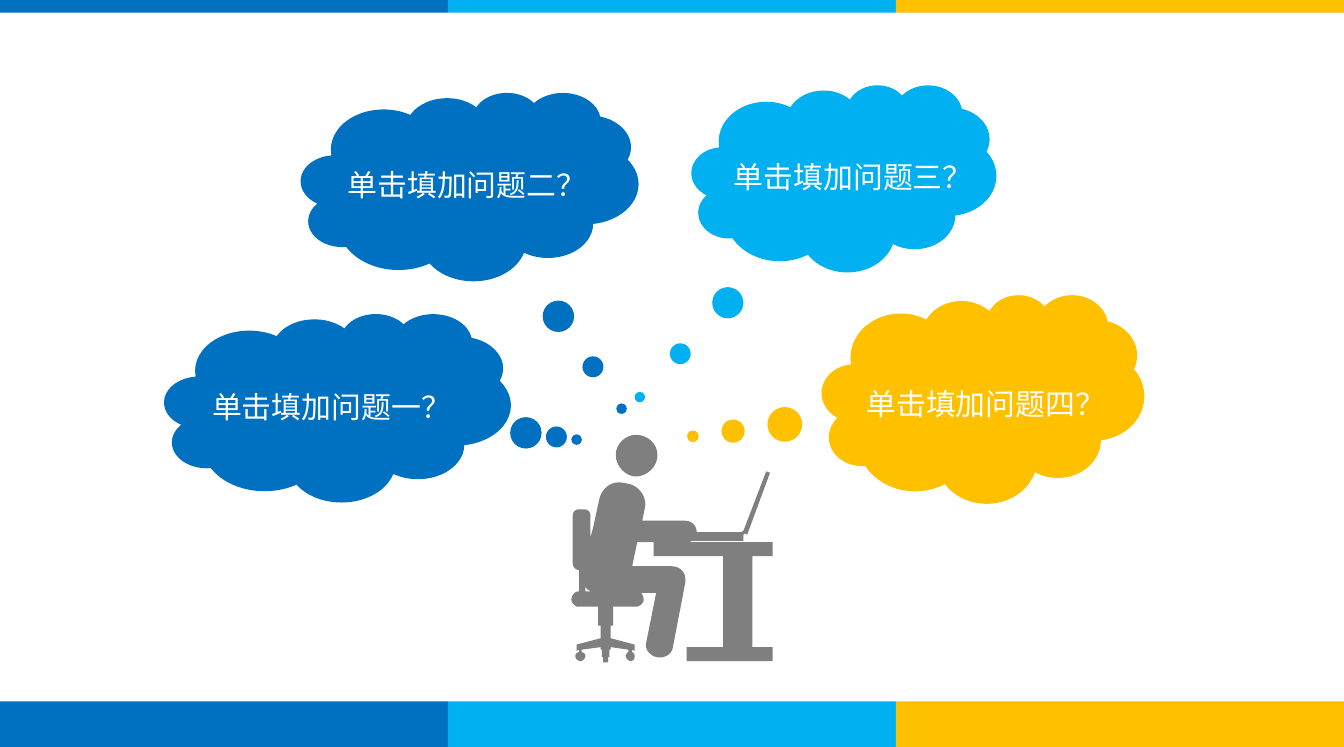
from lxml import etree
from pptx import Presentation
from pptx.dml.color import RGBColor
from pptx.enum.shapes import MSO_SHAPE
from pptx.enum.text import MSO_ANCHOR, PP_ALIGN
from pptx.oxml.ns import qn
from pptx.util import Inches, Pt

RECTANGLE = MSO_SHAPE.RECTANGLE
CLOUD = MSO_SHAPE.CLOUD_CALLOUT
BOTTOM = MSO_ANCHOR.BOTTOM
LEFT = PP_ALIGN.LEFT

BLUE = RGBColor(0x00, 0x70, 0xC0)
SKY = RGBColor(0x00, 0xB0, 0xF0)
AMBER = RGBColor(0xFF, 0xC0, 0x00)
GRAY = RGBColor(0x7F, 0x7F, 0x7F)
WHITE = RGBColor(0xFF, 0xFF, 0xFF)

FONT = "Noto Sans CJK SC"
SLIDE_WIDTH, SLIDE_HEIGHT = 10.63, 5.91
CURVE_STEPS = 8

# Left, top, width, height, pointer offset, colour, wrap, question
QUESTIONS = [
    (5.47, 0.67, 2.41, 1.48, (-0.67, 1.17), SKY, False, "单击填加问题三？"),
    (1.3, 2.48, 2.74, 1.49, (0.69, 0.17), BLUE, False, "单击填加问题一？"),
    (6.5, 2.33, 2.55, 1.65, (-0.9, 0.18), AMBER, False, "单击填加问题四？"),
    (2.38, 0.73, 2.67, 1.49, (0.45, 1.18), BLUE, True, "单击填加问题二？"),
]

# Outlines in inches: a pair is a corner, six numbers are a Bezier curve
HEAD = [
    (5.2, 3.6), (5.2, 3.51, 5.12, 3.44, 5.03, 3.44),
    (4.95, 3.44, 4.87, 3.51, 4.87, 3.6),
    (4.87, 3.69, 4.95, 3.77, 5.03, 3.77),
    (5.12, 3.77, 5.2, 3.69, 5.2, 3.6),
]
CHAIR_BASE = [
    (4.52, 4.75), (4.52, 4.77, 4.55, 4.8, 4.57, 4.8),
    (4.73, 4.8), (4.73, 4.95), (4.75, 4.95), (4.75, 5.05),
    (4.56, 5.1), (4.56, 5.15), (4.58, 5.14), (4.58, 5.16),
    (4.56, 5.16, 4.55, 5.18, 4.55, 5.19),
    (4.55, 5.21, 4.57, 5.23, 4.59, 5.23),
    (4.61, 5.23, 4.63, 5.21, 4.63, 5.19),
    (4.63, 5.18, 4.62, 5.16, 4.6, 5.16),
    (4.6, 5.14), (4.75, 5.12), (4.75, 5.14), (4.76, 5.14),
    (4.76, 5.2), (4.77, 5.2), (4.77, 5.24), (4.81, 5.24),
    (4.81, 5.2), (4.82, 5.2), (4.82, 5.14), (4.83, 5.14),
    (4.83, 5.12), (4.97, 5.14), (4.97, 5.16),
    (4.96, 5.16, 4.95, 5.18, 4.95, 5.19),
    (4.95, 5.21, 4.97, 5.23, 4.99, 5.23),
    (5.01, 5.23, 5.02, 5.21, 5.02, 5.19),
    (5.02, 5.18, 5.01, 5.16, 5, 5.16),
    (5, 5.14), (5.02, 5.15), (5.02, 5.1), (4.83, 5.05),
    (4.83, 4.95), (4.85, 4.95), (4.85, 4.8), (5.03, 4.8),
    (5.06, 4.8, 5.09, 4.77, 5.09, 4.75), (5.09, 4.74),
    (5.09, 4.72, 5.08, 4.7, 5.07, 4.69),
]
LEGS = [
    (5.19, 4.69), (5.11, 5.09),
    (5.1, 5.14, 5.14, 5.19, 5.2, 5.2),
    (5.25, 5.21, 5.31, 5.18, 5.32, 5.13),
    (5.42, 4.61), (5.42, 4.58),
    (5.42, 4.52, 5.37, 4.48, 5.31, 4.48),
    (5, 4.48), (5.04, 4.29),
]
ARM_AND_LAPTOP = [
    (5.42, 4.29), (5.44, 4.29, 5.46, 4.29, 5.47, 4.28),
    (5.88, 4.28), (5.88, 4.23), (5.89, 4.22), (5.91, 4.23),
    (6.09, 3.74), (6.06, 3.73), (5.88, 4.2), (5.86, 4.21),
    (5.51, 4.21), (5.51, 4.16, 5.47, 4.12, 5.42, 4.12),
    (5.08, 4.12),
]
BACK = [
    (5.1, 4.02), (5.12, 3.94, 5.06, 3.85, 4.98, 3.83),
    (4.93, 3.82), (4.84, 3.8, 4.76, 3.86, 4.74, 3.95),
    (4.69, 4.18), (4.67, 4.25), (4.67, 4.08),
    (4.67, 4.05, 4.65, 4.03, 4.62, 4.03), (4.58, 4.03),
    (4.55, 4.03, 4.53, 4.05, 4.53, 4.08), (4.53, 4.46),
    (4.53, 4.48, 4.55, 4.51, 4.58, 4.51), (4.58, 4.68),
    (4.57, 4.68), (4.55, 4.68, 4.52, 4.71, 4.52, 4.74),
]
SEAT_GAP = [(4.63, 4.64), (4.64, 4.66, 4.65, 4.67, 4.68, 4.68), (4.63, 4.68)]
DESK = [
    (5.72, 5.12), (5.43, 5.12), (5.43, 5.23), (6.11, 5.23),
    (6.11, 5.12), (5.95, 5.12), (5.95, 4.4), (6.11, 4.4),
    (6.11, 4.29), (5.17, 4.29), (5.17, 4.4), (5.72, 4.4),
]
SEATED_BODY = CHAIR_BASE + LEGS + ARM_AND_LAPTOP + BACK


def paint(shape, color):
    shape.shadow.inherit = False
    shape.fill.solid()
    shape.fill.fore_color.rgb = color
    shape.line.fill.background()


def add_band(slide, top, height):
    width = SLIDE_WIDTH / 3
    for column, color in enumerate((BLUE, SKY, AMBER)):
        bar = slide.shapes.add_shape(
            RECTANGLE, Inches(column * width), Inches(top), Inches(width), Inches(height))
        paint(bar, color)


def add_question(slide, left, top, width, height, pointer, color, wrap, question):
    cloud = slide.shapes.add_shape(
        CLOUD, Inches(left), Inches(top), Inches(width), Inches(height))
    cloud.adjustments[0], cloud.adjustments[1] = pointer
    paint(cloud, color)
    text_frame = cloud.text_frame
    text_frame.word_wrap = wrap
    text_frame.vertical_anchor = BOTTOM
    text_frame.margin_left = 0
    text_frame.margin_top = text_frame.margin_right = Inches(0.03)
    text_frame.margin_bottom = Inches(0.32)
    text_frame.text = question
    paragraph = text_frame.paragraphs[0]
    paragraph.alignment = LEFT
    font = paragraph.runs[0].font
    font.size = Pt(17)
    font.color.rgb = WHITE
    font.name = FONT
    # East Asian typeface
    properties = paragraph.runs[0]._r.get_or_add_rPr()
    etree.SubElement(properties, qn("a:ea")).set("typeface", FONT)


def trace(outline):
    """Turn corners and Bezier curves into a list of points in EMU."""
    points = []
    for segment in outline:
        if len(segment) == 2:
            points.append(segment)
            continue
        x0, y0 = points[-1]
        x1, y1, x2, y2, x3, y3 = segment
        for step in range(1, CURVE_STEPS + 1):
            t = step / CURVE_STEPS
            a, b, c, d = (1 - t) ** 3, 3 * t * (1 - t) ** 2, 3 * t * t * (1 - t), t ** 3
            points.append((a * x0 + b * x1 + c * x2 + d * x3,
                           a * y0 + b * y1 + c * y2 + d * y3))
    return [(Inches(x), Inches(y)) for x, y in points]


def add_figure(slide, outlines, color):
    first, *others = [trace(outline) for outline in outlines]
    builder = slide.shapes.build_freeform(*first[0])
    builder.add_line_segments(first[1:], close=True)
    for points in others:
        builder.move_to(*points[0])
        builder.add_line_segments(points[1:], close=True)
    paint(builder.convert_to_shape(), color)


def main():
    presentation = Presentation()
    presentation.slide_width = Inches(SLIDE_WIDTH)
    presentation.slide_height = Inches(SLIDE_HEIGHT)
    slide = presentation.slides.add_slide(presentation.slide_layouts[6])

    # Person at the desk
    add_figure(slide, (HEAD, SEATED_BODY, SEAT_GAP, DESK), GRAY)

    # Thought clouds
    for question in QUESTIONS:
        add_question(slide, *question)

    # Coloured bands
    add_band(slide, 0, 0.1)
    add_band(slide, 5.55, 0.36)

    presentation.save("out.pptx")


if __name__ == "__main__":
    main()
